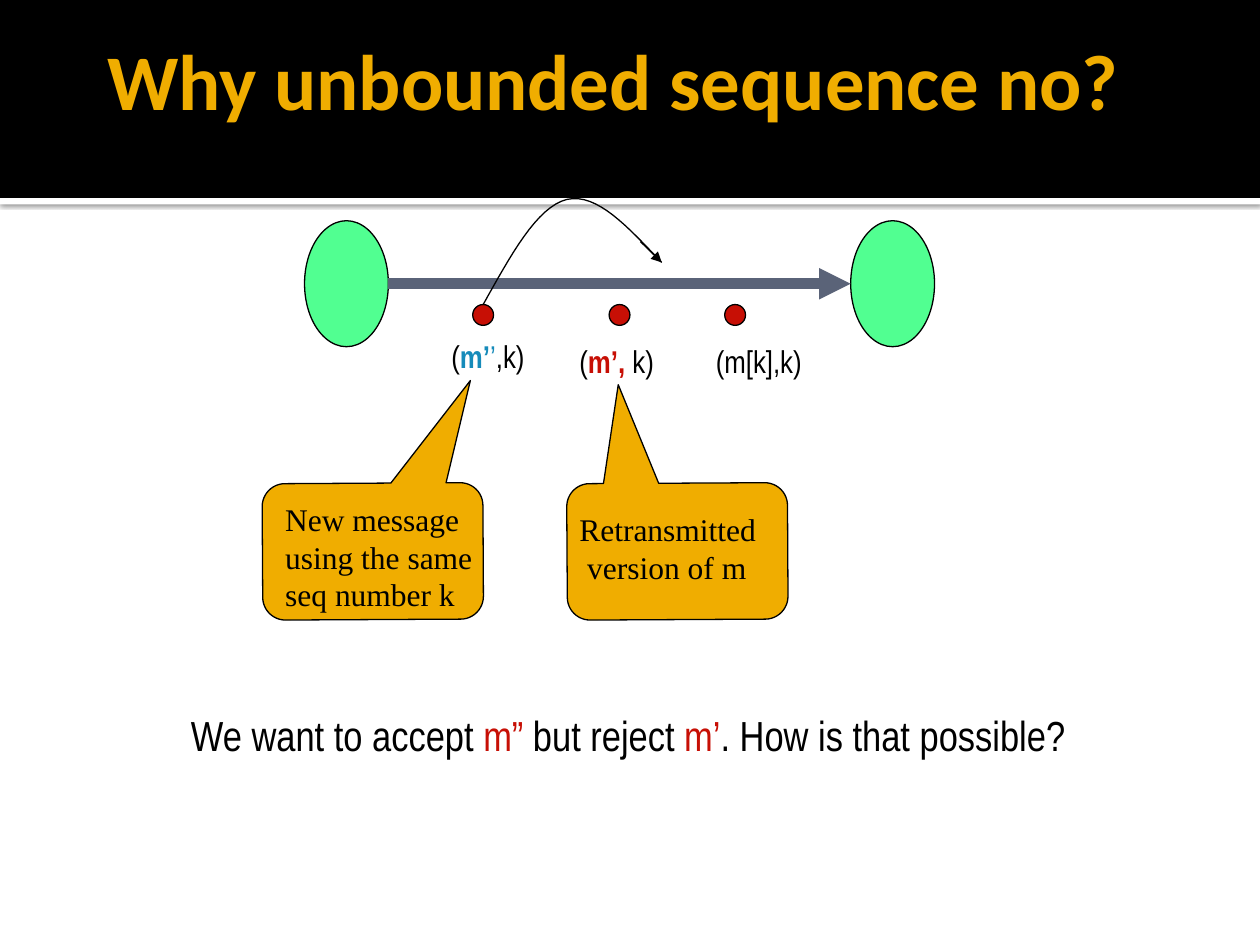
from lxml import etree
from pptx import Presentation
from pptx.dml.color import RGBColor
from pptx.enum.shapes import MSO_CONNECTOR, MSO_SHAPE
from pptx.enum.text import MSO_ANCHOR, MSO_AUTO_SIZE
from pptx.oxml.ns import qn
from pptx.util import Cm, Pt

RECTANGLE = MSO_SHAPE.RECTANGLE
OVAL = MSO_SHAPE.OVAL
CALLOUT = MSO_SHAPE.ROUNDED_RECTANGULAR_CALLOUT
STRAIGHT = MSO_CONNECTOR.STRAIGHT
MIDDLE, TOP = MSO_ANCHOR.MIDDLE, MSO_ANCHOR.TOP
FIT, FIXED = MSO_AUTO_SIZE.SHAPE_TO_FIT_TEXT, MSO_AUTO_SIZE.NONE

BLACK = RGBColor(0x00, 0x00, 0x00)
WHITE = RGBColor(0xFF, 0xFF, 0xFF)
AMBER = RGBColor(0xF0, 0xAD, 0x00)
GREEN = RGBColor(0x51, 0xFF, 0x91)
RED = RGBColor(0xC7, 0x0F, 0x05)
BLUE = RGBColor(0x16, 0x8B, 0xBA)
SLATE = RGBColor(0x5A, 0x63, 0x78)

TITLE_FONT, LABEL_FONT, NOTE_FONT = "Calibri", "Arial Narrow", "Times New Roman"


def format_span(span, font=LABEL_FONT, size=18, color=BLACK, bold=False):
    span.font.name = font
    span.font.size = Pt(size)
    span.font.color.rgb = color
    span.font.bold = bold


def bezier(start, control_1, control_2, end, steps=16):
    """Points along a cubic curve, without its start."""
    points = []
    for step in range(1, steps + 1):
        t = step / steps
        weights = ((1 - t) ** 3, 3 * t * (1 - t) ** 2, 3 * t * t * (1 - t), t ** 3)
        corners = (start, control_1, control_2, end)
        points.append(tuple(sum(w * corner[axis] for w, corner in zip(weights, corners))
                            for axis in (0, 1)))
    return points


class SlideBuilder:
    """Holds the line style and the current page; lengths are centimetres."""

    outline = 0.75

    def __init__(self, page):
        self.page = page

    def shape(self, kind, left, top, width, height, fill, outlined=True):
        shape = self.page.shapes.add_shape(kind, Cm(left), Cm(top), Cm(width), Cm(height))
        shape.shadow.inherit = False
        shape.fill.solid()
        shape.fill.fore_color.rgb = fill
        if outlined:
            shape.line.color.rgb = BLACK
            shape.line.width = Pt(self.outline)
        else:
            shape.line.fill.background()
        return shape

    def drop_shadow(self, shape):
        effects = shape._element.spPr.find(qn("a:effectLst"))
        shadow = etree.SubElement(effects, qn("a:outerShdw"), blurRad=str(Pt(2.5)),
                                  dist=str(Pt(0.8)), dir="5400000", rotWithShape="0")
        color = etree.SubElement(shadow, qn("a:srgbClr"), val=str(BLACK))
        etree.SubElement(color, qn("a:alpha"), val="60000")

    def callout(self, left, top, tip_x, tip_y):
        shape = self.shape(CALLOUT, left, top, 4.45, 2.75, AMBER)
        shape.rotation = 179.7
        for index, value in enumerate((tip_x, tip_y, 0.167)):
            shape.adjustments[index] = value

    def arrow(self, start, end, color=BLACK, width=outline):
        line = self.page.shapes.add_connector(STRAIGHT, *map(Cm, start + end))
        line.line.color.rgb = color
        line.line.width = Pt(width)
        etree.SubElement(line.line._get_or_add_ln(), qn("a:tailEnd"), type="triangle")
        etree.SubElement(line._element.spPr, qn("a:effectLst"))

    def curve(self, start, *segments):
        points = [start]
        for segment in segments:
            points += bezier(points[-1], *segment)
        points = [(Cm(x), Cm(y)) for x, y in points]
        builder = self.page.shapes.build_freeform(*points[0])
        builder.add_line_segments(points[1:], close=False)
        shape = builder.convert_to_shape()
        shape.shadow.inherit = False
        shape.fill.background()
        shape.line.color.rgb = BLACK
        shape.line.width = Pt(self.outline)

    def text(self, paragraphs, left, top, width, height, wrap=False,
             anchor=TOP, fit=FIT, **style):
        """Each paragraph is a list of (text, overriding format) pairs."""
        box = self.page.shapes.add_textbox(Cm(left), Cm(top), Cm(width), Cm(height))
        frame = box.text_frame
        frame.word_wrap = wrap
        frame.auto_size = fit
        frame.vertical_anchor = anchor
        for index, spans in enumerate(paragraphs):
            para = frame.add_paragraph() if index else frame.paragraphs[0]
            for words, override in spans:
                span = para.add_run()
                span.text = words
                format_span(span, **{**style, **override})


def main():
    deck = Presentation()
    deck.slide_width, deck.slide_height = Cm(25.4), Cm(19.05)
    builder = SlideBuilder(deck.slides.add_slide(deck.slide_layouts[6]))

    # Title band
    rule = builder.shape(RECTANGLE, 0, 3.99, 25.4, 0.13, WHITE, outlined=False)
    builder.drop_shadow(rule)
    builder.shape(RECTANGLE, 0, 0, 25.4, 3.99, BLACK, outlined=False)
    builder.text([[("Why unbounded sequence no?", {})]], 1.91, 0, 21.59, 3.18, wrap=True,
                 anchor=MIDDLE, fit=FIXED, font=TITLE_FONT, size=45, color=AMBER, bold=True)

    # Sender, receiver and the channel between them
    for left in (6.14, 17.15):
        builder.shape(OVAL, left, 4.45, 1.69, 2.54, GREEN)
    builder.arrow((7.83, 5.72), (17.15, 5.72), color=SLATE, width=6)

    # Messages in transit
    for left in (14.61, 9.53, 12.28):
        builder.shape(OVAL, left, 6.14, 0.42, 0.42, RED)
    labels = (
        (14.18, 6.77, 2.26, [("(m[k],k)", {})]),
        (11.43, 6.77, 2.01, [("(", {}), ("m’, ", {"color": RED, "bold": True}), ("k)", {})]),
        (8.85, 6.67, 1.98, [("(", {}), ("m’", {"color": BLUE, "bold": True}),
                            ("’", {"color": BLUE}), (",k)", {})]),
    )
    for left, top, width, spans in labels:
        builder.text([spans], left, top, width, 1.02)

    # Callouts
    builder.callout(11.43, 9.74, 0.264, 1.224)
    builder.text([[("Retransmitted", {})], [(" version of m", {})]],
                 11.43, 10.16, 4.4, 1.78, wrap=True, font=NOTE_FONT)
    builder.callout(5.29, 9.74, -0.446, 1.249)
    new_message = ("New message", "using the same", "seq number k")
    builder.text([[(words, {})] for words in new_message],
                 5.5, 9.95, 4.7, 2.54, wrap=True, font=NOTE_FONT)

    # Overtaking path of the new message
    builder.curve((9.74, 6.14),
                  ((10.29, 5.16), (10.82, 4.17), (11.43, 4.02)),
                  ((12.04, 3.88), (12.67, 4.59), (13.34, 5.29)))
    builder.arrow((12.91, 4.87), (13.34, 5.29))

    # Question
    builder.text([[("We want to accept ", {}), ("m”", {"color": RED}), (" but reject ", {}),
                   ("m’", {"color": RED}), (". How is that possible?", {})]],
                 3.6, 14.18, 18.14, 1.27, size=24)

    deck.save("out.pptx")


if __name__ == "__main__":
    main()
